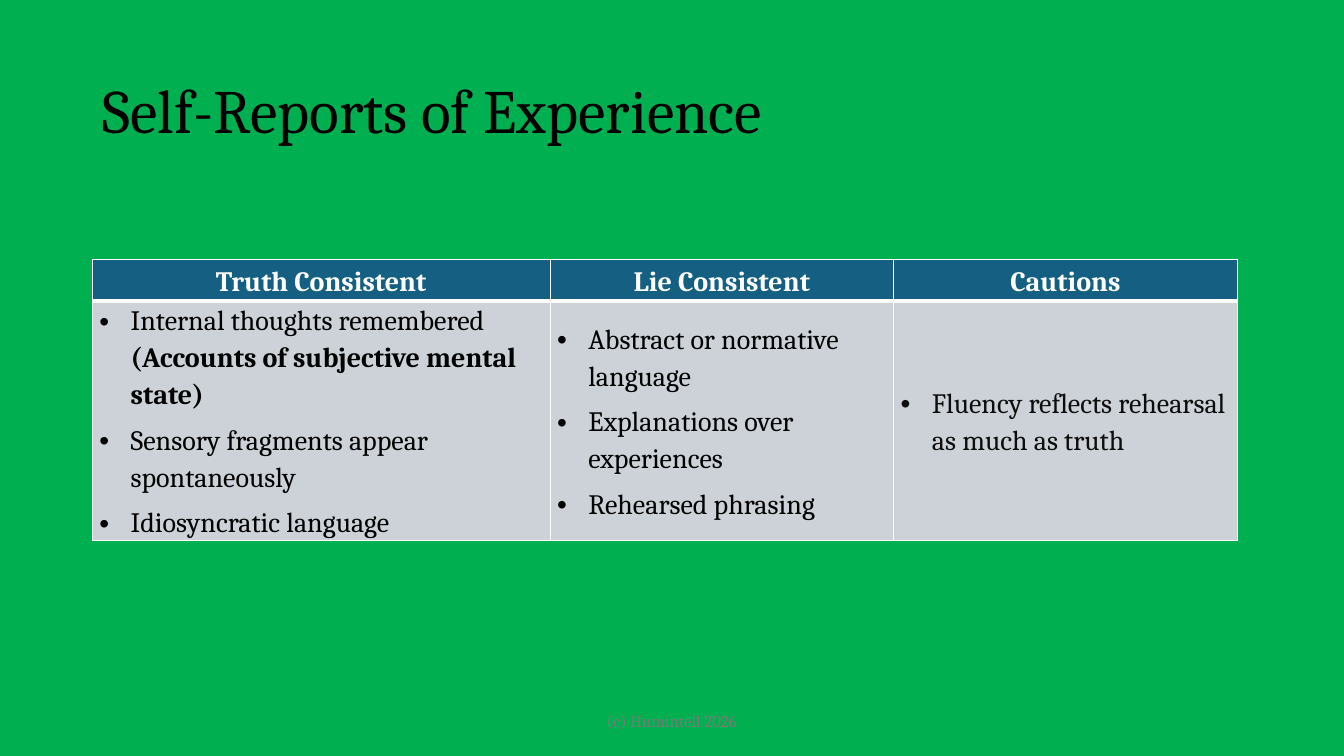
import dataclasses

import lxml.etree
import pptx
import pptx.dml.color
import pptx.enum.text
import pptx.oxml.ns
import pptx.util


@dataclasses.dataclass(frozen=True)
class Theme:
    """Colours, font and type sizes of the slide."""
    font: str = "Cambria"
    background: str = "00B050"
    header: str = "156082"
    body: str = "CCD2D8"
    border: str = "FFFFFF"
    light: str = "FFFFFF"
    dark: str = "000000"
    caution: str = "0D0D0D"
    muted: str = "797979"
    title_size: int = 44
    table_size: int = 20
    footer_size: int = 12


class SlideBuilder:
    """Places styled elements on one slide with a grid of 160 by 90 units."""

    def __init__(self, presentation, theme):
        """Add a title slide layout and paint its background."""
        self.theme = theme
        self.unit_width = presentation.slide_width / 160
        self.unit_height = presentation.slide_height / 90
        self.slide = presentation.slides.add_slide(presentation.slide_layouts[5])
        self.paint(self.slide.background.fill, theme.background)

    def columns(self, count):
        """Return the width of a number of grid columns."""
        return pptx.util.Emu(round(count * self.unit_width))

    def rows(self, count):
        """Return the height of a number of grid rows."""
        return pptx.util.Emu(round(count * self.unit_height))

    def area(self, left, top, width, height):
        """Return a grid rectangle as lengths."""
        return self.columns(left), self.rows(top), self.columns(width), self.rows(height)

    def paint(self, fill, color):
        """Apply a solid colour to a fill."""
        fill.solid()
        fill.fore_color.rgb = pptx.dml.color.RGBColor.from_string(color)

    def style(self, font, size, color, bold=False):
        """Apply the theme font to a run."""
        font.name = self.theme.font
        font.size = pptx.util.Pt(size)
        font.bold = bold
        font.color.rgb = pptx.dml.color.RGBColor.from_string(color)

    def title(self, text, *area):
        """Fill and move the title placeholder."""
        shape = self.slide.shapes.title
        shape.left, shape.top, shape.width, shape.height = self.area(*area)
        self.line(shape.text_frame, text, self.theme.title_size, self.theme.dark,
                  pptx.enum.text.PP_ALIGN.LEFT).line_spacing = 0.9

    def footer(self, text, *area):
        """Add the centred line at the foot."""
        shape = self.slide.shapes.add_textbox(*self.area(*area))
        self.line(shape.text_frame, text, self.theme.footer_size, self.theme.muted,
                  pptx.enum.text.PP_ALIGN.CENTER)

    def line(self, text_frame, text, size, color, alignment):
        """Write one middle-anchored paragraph and return it."""
        text_frame.text = text
        text_frame.word_wrap = True
        text_frame.auto_size = pptx.enum.text.MSO_AUTO_SIZE.NONE
        text_frame.vertical_anchor = pptx.enum.text.MSO_ANCHOR.MIDDLE
        paragraph = text_frame.paragraphs[0]
        paragraph.alignment = alignment
        self.style(paragraph.runs[0].font, size, color)
        return paragraph

    def table(self, contents, left, top, widths, heights):
        """Add a table with one heading and one bulleted cell per column."""
        frame = self.slide.shapes.add_table(
            2, len(contents), *self.area(left, top, sum(widths), sum(heights)))
        table = frame.table
        for row, height in zip(table.rows, heights):
            row.height = self.rows(height)
        for index, (heading, bullets, color) in enumerate(contents):
            table.columns[index].width = self.columns(widths[index])
            header, body = table.cell(0, index), table.cell(1, index)
            self.cell(header, self.theme.header, {"lnB": 3})
            self.cell(body, self.theme.body, {"lnT": 3})
            paragraph = header.text_frame.paragraphs[0]
            paragraph.alignment = pptx.enum.text.PP_ALIGN.CENTER
            self.table_paragraph(paragraph, [(heading, True)], self.theme.light)
            body.text_frame.text = "\n".join("" for _ in bullets)
            for paragraph, parts in zip(body.text_frame.paragraphs, bullets):
                self.bullet(paragraph)
                self.table_paragraph(paragraph, parts, color)

    def cell(self, cell, color, heavy_sides):
        """Set the margins, borders and fill of a cell."""
        cell.margin_left = cell.margin_right = pptx.util.Inches(0.07)
        cell.margin_top = cell.margin_bottom = 0
        cell.vertical_anchor = pptx.enum.text.MSO_ANCHOR.MIDDLE
        properties = cell._tc.get_or_add_tcPr()
        name = pptx.oxml.ns.qn
        for side in ("lnL", "lnR", "lnT", "lnB"):
            width = pptx.util.Pt(heavy_sides.get(side, 1))
            border = lxml.etree.SubElement(properties, name(f"a:{side}"), w=str(width))
            fill = lxml.etree.SubElement(border, name("a:solidFill"))
            lxml.etree.SubElement(fill, name("a:srgbClr"), val=self.theme.border)
        self.paint(cell.fill, color)

    def bullet(self, paragraph):
        """Give a paragraph a bullet and a hanging indent."""
        properties = paragraph._p.get_or_add_pPr()
        indent = pptx.util.Inches(0.31)
        properties.set("marL", str(indent))
        properties.set("indent", str(-indent))
        name = pptx.oxml.ns.qn
        lxml.etree.SubElement(properties, name("a:buFont"), typeface="Arial")
        lxml.etree.SubElement(properties, name("a:buChar"), char="•")

    def table_paragraph(self, paragraph, parts, color):
        """Write text parts with the table's spacing and type."""
        paragraph.line_spacing = 1.15
        paragraph.space_after = pptx.util.Pt(6)
        for text, bold in parts:
            run = paragraph.add_run()
            run.text = text
            self.style(run.font, self.theme.table_size, color, bold)


def main():
    """Build and save the slide."""
    presentation = pptx.Presentation()
    presentation.slide_width = pptx.util.Inches(40 / 3)
    presentation.slide_height = pptx.util.Inches(7.5)
    theme = Theme()
    builder = SlideBuilder(presentation, theme)
    builder.title("Self-Reports of Experience", 11, 4.8, 138, 17.4)
    contents = [
        ("Truth Consistent", [
            [("Internal thoughts remembered ", False),
             ("(Accounts of subjective mental state)", True)],
            [("Sensory fragments appear spontaneously", False)],
            [("Idiosyncratic language", False)],
        ], theme.dark),
        ("Lie Consistent", [
            [("Abstract or normative language", False)],
            [("Explanations over experiences", False)],
            [("Rehearsed phrasing", False)],
        ], theme.dark),
        ("Cautions", [
            [("Fluency reflects rehearsal as much as truth", False)],
        ], theme.caution),
    ]
    builder.table(contents, 11, 30.9, (54.5, 40.9, 40.9), (4.9, 28.5))
    builder.footer("(c) Humintell 2026", 53, 83.4, 54, 4.8)
    presentation.save("out.pptx")


if __name__ == "__main__":
    main()
